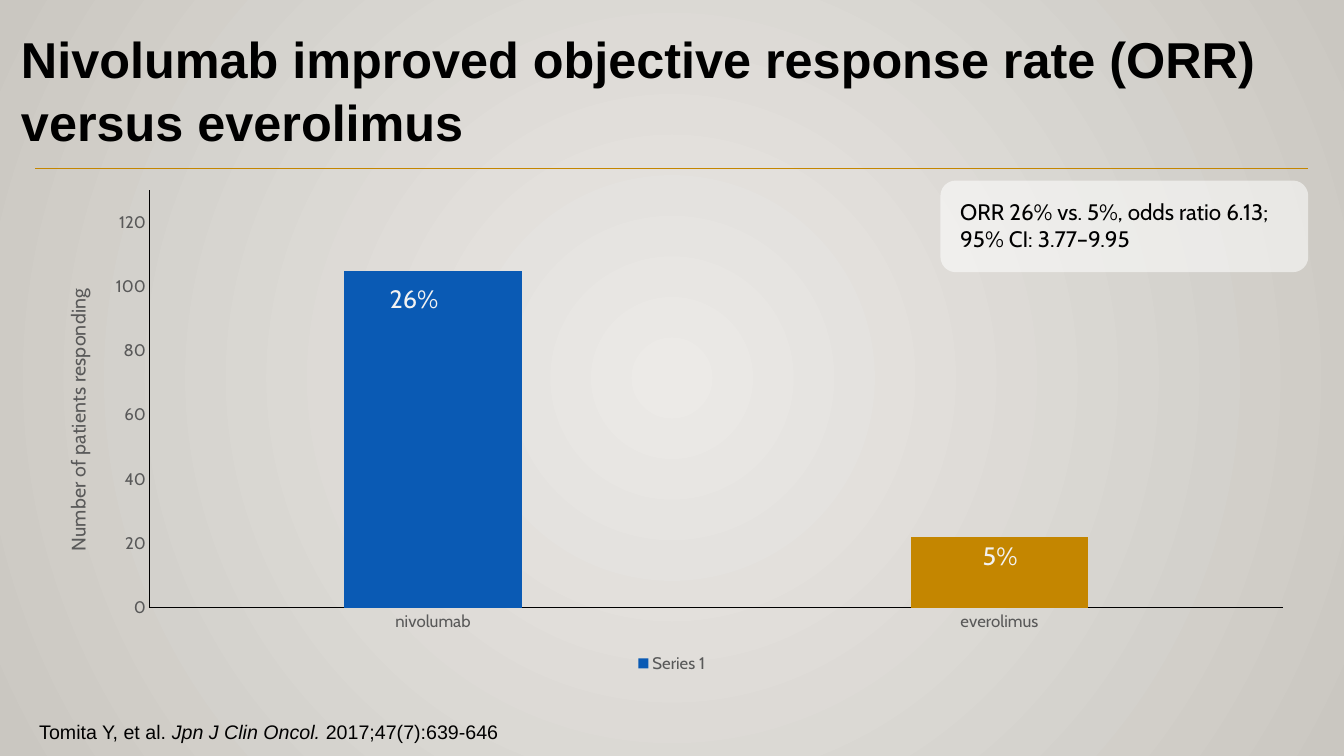
from lxml.etree import SubElement
from pptx import Presentation
from pptx.chart.data import CategoryChartData
from pptx.dml.color import RGBColor
from pptx.enum.chart import XL_CHART_TYPE, XL_LEGEND_POSITION, XL_TICK_MARK
from pptx.enum.shapes import MSO_CONNECTOR, MSO_SHAPE
from pptx.enum.text import MSO_ANCHOR, PP_ALIGN
from pptx.oxml import parse_xml
from pptx.oxml.ns import nsdecls, qn
from pptx.util import Cm, Pt

BLUE, GOLD, GRAY, BLACK, WHITE = "0A5AB4", "C48600", "595959", "000000", "FFFFFF"


def rgb(value):
    return RGBColor.from_string(value)


def set_font(font, name, size, color, bold=False):
    font.name, font.size, font.bold = name, Pt(size), bold
    font.color.rgb = rgb(color)


def manual_layout(inner=False, **fractions):
    target = '<c:layoutTarget val="inner"/>' if inner else ""
    modes = "".join(f'<c:{k}Mode val="edge"/>' for k in "xy")
    values = "".join(f'<c:{k} val="{v}"/>' for k, v in fractions.items())
    return parse_xml(f'<c:layout {nsdecls("c")}><c:manualLayout>{target}{modes}{values}'
                     '</c:manualLayout></c:layout>')


class SlideBuilder:
    heading_font = "Arial"
    body_font = "Cabin"

    def __init__(self, slide):
        self.s = slide

    def background(self, center, edge):
        fill = self.s.background.fill
        fill.gradient()
        for stop, color in zip(fill.gradient_stops, (center, edge)):
            stop.color.rgb = rgb(color)
        grad = self.s._element.find(".//" + qn("a:gradFill"))
        grad.remove(grad.find(qn("a:lin")))
        circle = SubElement(grad, qn("a:path"), path="circle")
        SubElement(circle, qn("a:fillToRect"), {side: "50000" for side in "ltrb"})

    def text(self, x, y, w, h, lines, size, font=None, color=BLACK, bold=False,
             align=PP_ALIGN.LEFT, anchor=MSO_ANCHOR.TOP, spacing=None):
        tf = self.s.shapes.add_textbox(Cm(x), Cm(y), Cm(w), Cm(h)).text_frame
        tf.word_wrap = True
        tf.vertical_anchor = anchor
        for i, runs in enumerate(lines):
            p = tf.add_paragraph() if i else tf.paragraphs[0]
            p.alignment, p.line_spacing = align, spacing
            set_font(p.font, font or self.body_font, size, color, bold)
            for content, italic in runs:
                r = p.add_run()
                r.text = content
                if italic:
                    r.font.italic = True

    def rule(self, x1, x2, y, color):
        line = self.s.shapes.add_connector(MSO_CONNECTOR.STRAIGHT, Cm(x1), Cm(y), Cm(x2), Cm(y))
        line.line.color.rgb = rgb(color)
        line.line.width = Pt(1)
        SubElement(line._element.spPr, qn("a:effectLst"))

    def panel(self, x, y, w, h, color, opacity):
        sp = self.s.shapes.add_shape(MSO_SHAPE.ROUNDED_RECTANGLE, Cm(x), Cm(y), Cm(w), Cm(h))
        sp.shadow.inherit = False
        sp.fill.solid()
        sp.fill.fore_color.rgb = rgb(color)
        sp.line.fill.background()
        clr = sp._element.spPr.find(".//" + qn("a:srgbClr"))
        SubElement(clr, qn("a:alpha"), val=str(opacity * 1000))

    def axis(self, axis):
        axis.has_major_gridlines = False
        axis.major_tick_mark = axis.minor_tick_mark = XL_TICK_MARK.NONE
        set_font(axis.tick_labels.font, self.body_font, 12, GRAY)
        axis.format.line.color.rgb = rgb(BLACK)
        axis.format.line.width = Pt(0.75)

    def column_chart(self, x, y, w, h, cats, name, values, colors, axis_title, top):
        data = CategoryChartData()
        data.categories = cats
        data.add_series(name, values)
        chart = self.s.shapes.add_chart(XL_CHART_TYPE.COLUMN_CLUSTERED, Cm(x), Cm(y),
                                        Cm(w), Cm(h), data).chart
        chart.has_title = False
        set_font(chart.font, self.body_font, 10, BLACK)
        chart.has_legend = True
        chart.legend.position = XL_LEGEND_POSITION.BOTTOM
        chart.legend.include_in_layout = False
        set_font(chart.legend.font, self.body_font, 12, GRAY)

        plot = chart.plots[0]
        plot.gap_width, plot.overlap, plot.vary_by_categories = 219, -27, False
        series = plot.series[0]
        for fmt, color in ((series.format, colors[0]), (series.points[1].format, colors[1])):
            fmt.fill.solid()
            fmt.fill.fore_color.rgb = rgb(color)

        value_axis = chart.value_axis
        for axis in (chart.category_axis, value_axis):
            self.axis(axis)
        value_axis.minimum_scale, value_axis.maximum_scale, value_axis.major_unit = 0, top, 20
        title = value_axis.axis_title
        p = title.text_frame.paragraphs[0]
        p.text = axis_title
        set_font(p.font, self.body_font, 14, GRAY)

        for parent, layout in (
            (chart._chartSpace.chart.plotArea, manual_layout(True, x=0.09, y=0.02, w=0.89, h=0.84)),
            (title._element, manual_layout(x=0.02, y=0.21)),
        ):
            old = parent.find(qn("c:layout"))
            if old is not None:
                parent.replace(old, layout)
            elif parent.find(qn("c:tx")) is not None:
                parent.find(qn("c:tx")).addnext(layout)
            else:
                parent.insert(0, layout)


def main():
    prs = Presentation()
    prs.slide_width, prs.slide_height = Cm(33.87), Cm(19.05)
    b = SlideBuilder(prs.slides.add_slide(prs.slide_layouts[6]))
    b.background("ECEAE7", "CAC7C1")
    b.text(0.74, 18.01, 32.39, 0.86,
           [[("Tomita Y, et al. ", False), ("Jpn J Clin Oncol. ", True),
             ("2017;47(7):639-646", False)]], 14, b.heading_font)
    b.text(0.28, 0.61, 33.4, 3.33,
           [[("Nivolumab improved objective response rate (ORR)", False)],
            [("versus everolimus", False)]], 36, b.heading_font, bold=True,
           anchor=MSO_ANCHOR.BOTTOM, spacing=1.04)
    b.rule(0.89, 32.97, 4.24, GOLD)
    b.column_chart(0.89, 4.55, 32.08, 12.52, ["nivolumab", "everolimus"], "Series 1",
                   (105, 22), (BLUE, GOLD), "Number of patients responding", 130)
    for x, y, w, rate in ((9.47, 7.01, 1.93, "26%"), (24.38, 13.49, 1.65, "5%")):
        b.text(x, y, w, 1.02, [[(rate, False)]], 18, color="F2F2F2", align=PP_ALIGN.CENTER)
    b.panel(23.7, 4.55, 9.27, 2.31, WHITE, 55)
    b.text(23.95, 4.88, 8.74, 2.31,
           [[("ORR 26% vs. 5%, odds ratio 6.13; 95% CI: 3.77–9.95", False)]], 16)
    prs.save("out.pptx")


if __name__ == "__main__":
    main()
